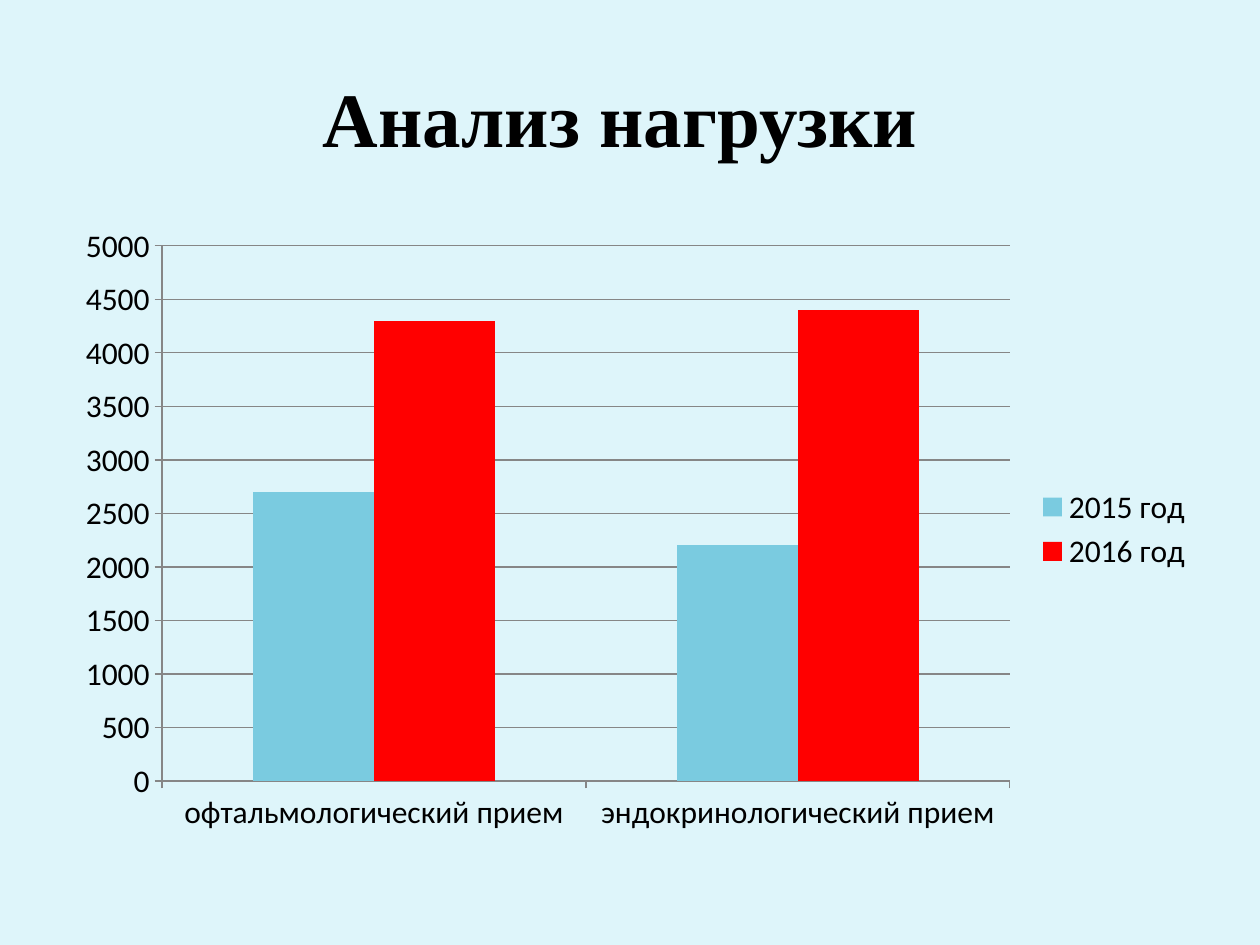
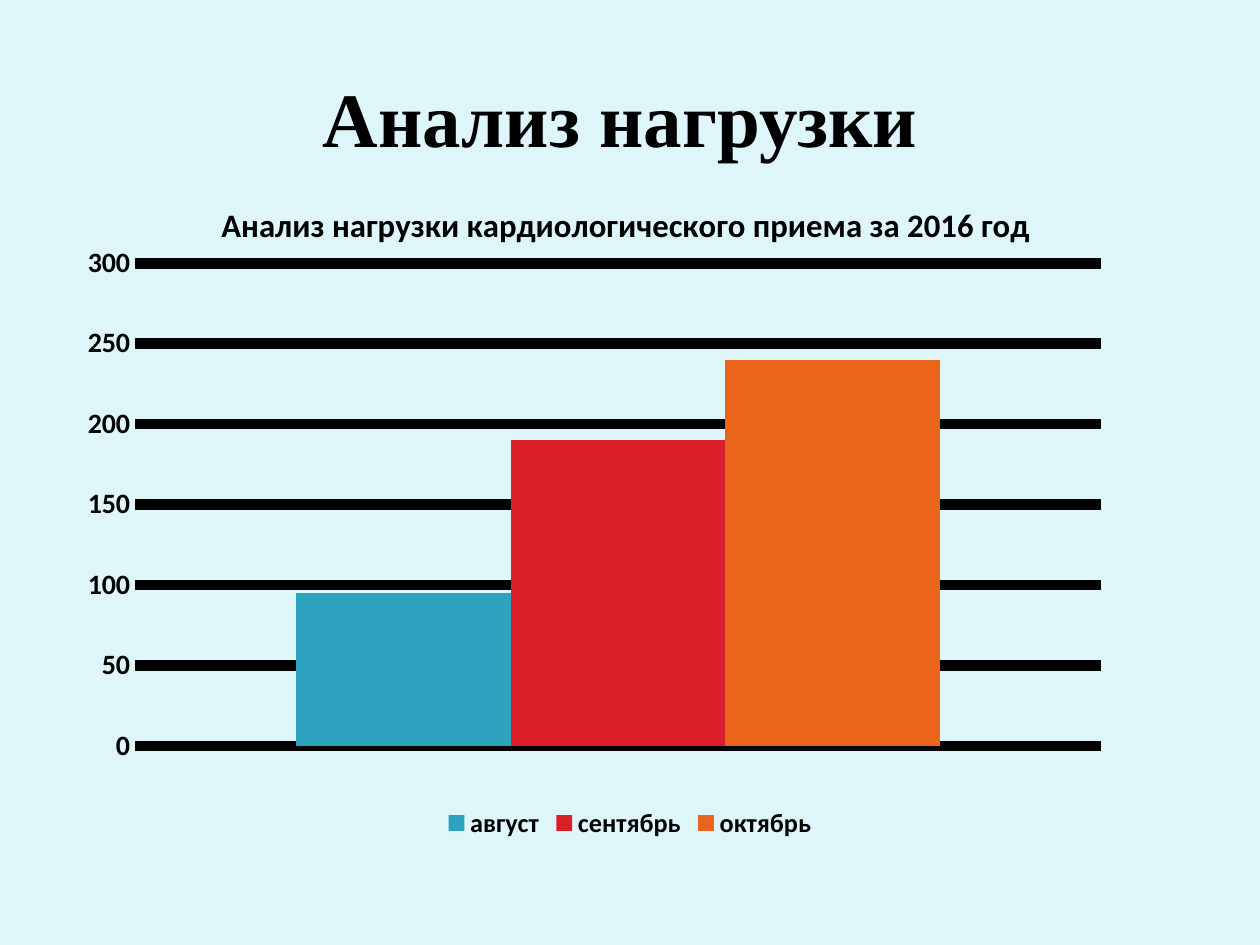
from dataclasses import dataclass

from lxml import etree
from pptx import Presentation
from pptx.chart.data import CategoryChartData
from pptx.dml.color import RGBColor
from pptx.enum.chart import XL_CHART_TYPE, XL_LEGEND_POSITION, XL_TICK_MARK
from pptx.enum.text import MSO_ANCHOR, PP_ALIGN
from pptx.oxml.ns import qn
from pptx.util import Inches, Pt

CLUSTERED = XL_CHART_TYPE.COLUMN_CLUSTERED
LEGEND_RIGHT, LEGEND_BOTTOM = XL_LEGEND_POSITION.RIGHT, XL_LEGEND_POSITION.BOTTOM
TICK_OUT, TICK_NONE = XL_TICK_MARK.OUTSIDE, XL_TICK_MARK.NONE
CENTER, MIDDLE = PP_ALIGN.CENTER, MSO_ANCHOR.MIDDLE


@dataclass(frozen=True)
class Theme:
    background: RGBColor = RGBColor.from_string("DEF5FA")
    ink: RGBColor = RGBColor.from_string("000000")
    axis_gray: RGBColor = RGBColor.from_string("868686")
    title_font: str = "Times New Roman"
    chart_font: str = "Calibri"
    title_size: int = 44
    heading_size: float = 18.7
    chart_size: int = 18
    axis_size: int = 16
    legend_size: int = 15


THEME = Theme()


def write_text(frame, text, *, font, size, bold=True, align=CENTER):
    paragraph = frame.paragraphs[0]
    paragraph.alignment = align
    run = paragraph.add_run()
    run.text = text
    run.font.name = font
    run.font.size = Pt(size)
    run.font.bold = bold
    run.font.color.rgb = THEME.ink


def place_in_chart(element, index, **settings):
    """Give a chart part a manual layout, in fractions of the chart's size."""
    for old_layout in element.findall(qn("c:layout")):
        element.remove(old_layout)
    layout = etree.Element(qn("c:layout"))
    manual = etree.SubElement(layout, qn("c:manualLayout"))
    for tag, value in settings.items():
        etree.SubElement(manual, qn(f"c:{tag}")).set("val", str(value))
    element.insert(index, layout)


slide_specs = [
    dict(
        place=(0.5, 1.7, 9.07, 5),
        categories=["офтальмологический прием", "эндокринологический прием"],
        series=[("2015 год", (2700, 2200), "7ACBE0"), ("2016 год", (4300, 4400), "FF0000")],
        maximum=5000, step=500, tick=TICK_OUT,
        grid_color=THEME.axis_gray, grid_width=0.75,
        legend=LEGEND_RIGHT, axis_size=THEME.chart_size, legend_size=THEME.chart_size,
        heading=None,
    ),
    dict(
        place=(0.5, 1.39, 9, 5.31),
        categories=["1"],
        series=[("август", (95,), "2DA2BF"), ("сентябрь", (190,), "DA1F28"),
                ("октябрь", (240,), "EB641B")],
        maximum=300, step=50, tick=TICK_NONE,
        grid_color=THEME.ink, grid_width=6,
        legend=LEGEND_BOTTOM, axis_size=THEME.axis_size, legend_size=THEME.legend_size,
        heading="Анализ нагрузки кардиологического приема за 2016 год ",
    ),
]

deck = Presentation()
deck.slide_width, deck.slide_height = Inches(10), Inches(7.5)

for spec_of_slide in slide_specs:
    slide = deck.slides.add_slide(deck.slide_layouts[6])
    slide.background.fill.solid()
    slide.background.fill.fore_color.rgb = THEME.background

    title = slide.shapes.add_textbox(Inches(0.5), Inches(0.3), Inches(9), Inches(1.25)).text_frame
    title.word_wrap = True
    title.vertical_anchor = MIDDLE
    write_text(title, "Анализ нагрузки ", font=THEME.title_font, size=THEME.title_size)

    workload = CategoryChartData()
    workload.categories = spec_of_slide["categories"]
    for name, visits, _ in spec_of_slide["series"]:
        workload.add_series(name, visits)
    left, top, width, height = spec_of_slide["place"]
    chart = slide.shapes.add_chart(CLUSTERED, Inches(left), Inches(top),
                                   Inches(width), Inches(height), workload).chart
    heading = spec_of_slide["heading"]
    emphasized = heading is not None

    chart.font.name = THEME.chart_font
    chart.font.size = Pt(THEME.chart_size)
    chart.font.color.rgb = THEME.ink
    plot = chart.plots[0]
    plot.gap_width, plot.overlap = 150, 0
    plot.vary_by_categories = False
    for bars, (_, _, color) in zip(plot.series, spec_of_slide["series"]):
        bars.format.fill.solid()
        bars.format.fill.fore_color.rgb = RGBColor.from_string(color)

    value_axis, category_axis = chart.value_axis, chart.category_axis
    value_axis.minimum_scale = 0
    value_axis.maximum_scale = spec_of_slide["maximum"]
    value_axis.major_unit = spec_of_slide["step"]
    value_axis.has_major_gridlines = True
    grid_line = value_axis.major_gridlines.format.line
    grid_line.color.rgb = spec_of_slide["grid_color"]
    grid_line.width = Pt(spec_of_slide["grid_width"])
    for axis in (value_axis, category_axis):
        axis.major_tick_mark = spec_of_slide["tick"]
        axis.minor_tick_mark = TICK_NONE
        axis.format.line.color.rgb = THEME.axis_gray
        axis.format.line.width = Pt(0.75)

    chart.has_legend = True
    chart.legend.position = spec_of_slide["legend"]
    chart.legend.include_in_layout = False
    for font, size in ((value_axis.tick_labels.font, spec_of_slide["axis_size"]),
                       (chart.legend.font, spec_of_slide["legend_size"])):
        font.name = THEME.chart_font
        font.size = Pt(size)
        font.bold = emphasized
        font.color.rgb = THEME.ink

    chart.has_title = emphasized
    if emphasized:
        write_text(chart.chart_title.text_frame, heading,
                   font=THEME.chart_font, size=THEME.heading_size)
        chart_title = chart.chart_title._element
        place_in_chart(chart_title, 1, xMode="edge", yMode="edge",
                       x=1.21 / width, y=0.17 / height)
        category_axis.visible = False
        value_axis.format.line.fill.background()
        plot_area = chart._chartSpace.find(f".//{qn('c:plotArea')}")
        place_in_chart(plot_area, 0, layoutTarget="inner", xMode="edge", yMode="edge",
                       x=0.57 / width, y=0.7 / height, w=7.67 / width, h=3.83 / height)

deck.save("out.pptx")
